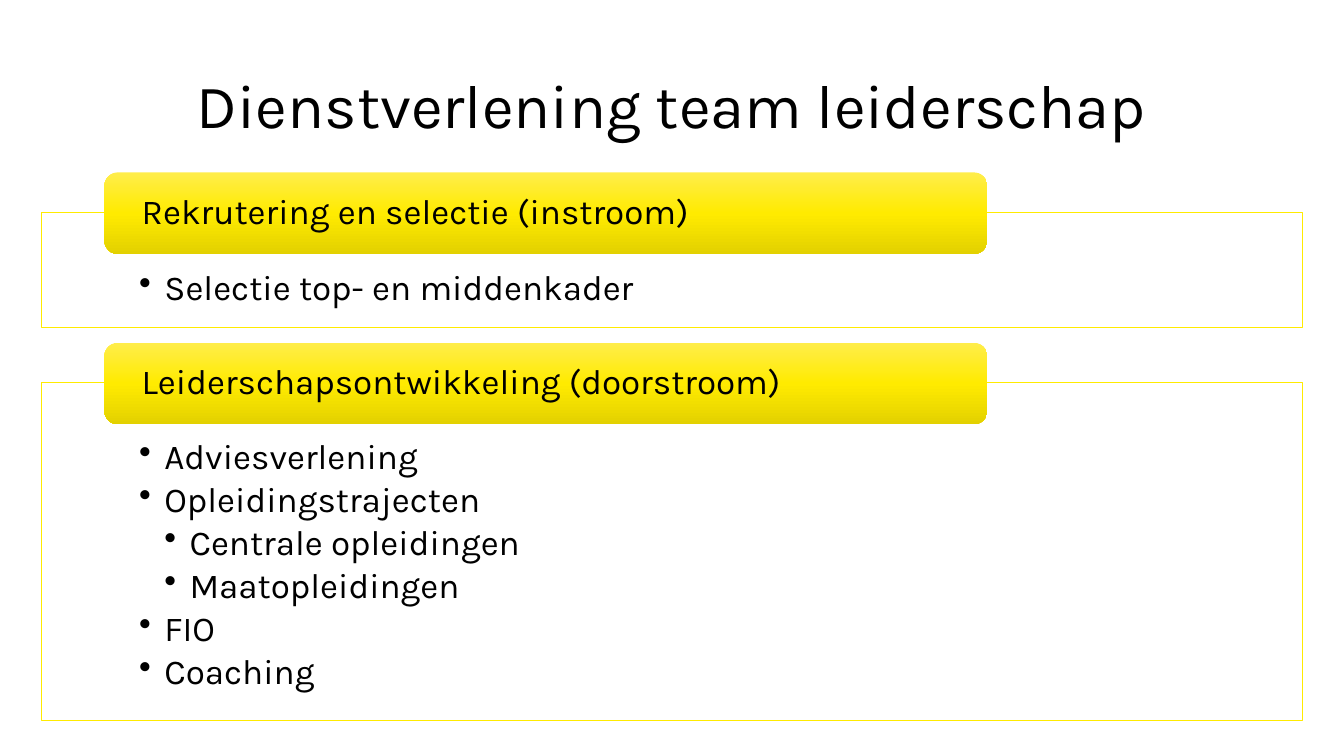
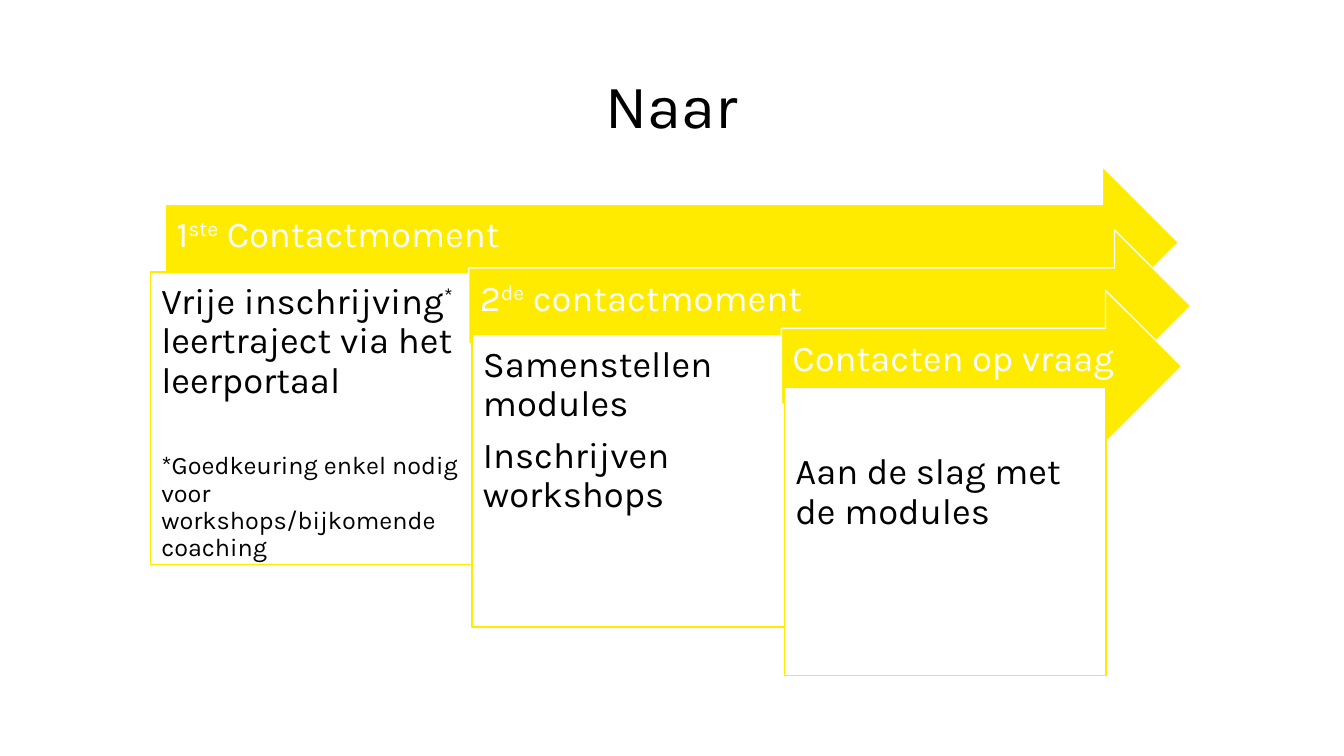
from copy import deepcopy

from lxml import etree
from pptx import Presentation
from pptx.dml.color import RGBColor
from pptx.enum.shapes import MSO_SHAPE
from pptx.enum.text import MSO_ANCHOR, MSO_AUTO_SIZE, PP_ALIGN
from pptx.oxml.ns import qn
from pptx.util import Inches, Pt

RECTANGLE = MSO_SHAPE.RECTANGLE
ROUNDED = MSO_SHAPE.ROUNDED_RECTANGLE
ARROW = MSO_SHAPE.RIGHT_ARROW
TOP, MIDDLE = MSO_ANCHOR.TOP, MSO_ANCHOR.MIDDLE
LEFT, CENTER = PP_ALIGN.LEFT, PP_ALIGN.CENTER
NO_AUTOFIT = MSO_AUTO_SIZE.NONE

BLACK = RGBColor(0x00, 0x00, 0x00)
WHITE = RGBColor(0xFF, 0xFF, 0xFF)
YELLOW = RGBColor(0xFF, 0xEB, 0x00)
BAND_GRADIENT = [
    (0, RGBColor(0xFF, 0xED, 0x4B)),
    (0.5, YELLOW),
    (1, RGBColor(0xE3, 0xD1, 0x00)),
]
FONT = "Karla"
TITLE_ONLY = 5

presentation = Presentation()
presentation.slide_width = Inches(13.33)
presentation.slide_height = Inches(7.5)

# The grid has 100 columns and 100 rows
COLUMN = presentation.slide_width / 100
ROW = presentation.slide_height / 100
MARGIN = 3.08
CONTENT_WIDTH = 100 - 2 * MARGIN


def add_box(slide, kind, place, insets, anchor, fill=None, line=None, line_width=1):
    """Add a shape at (left, top, width, height) in grid units; a fill of None keeps it open for a gradient."""
    left, top, width, height = place
    shape = slide.shapes.add_shape(
        kind, round(left * COLUMN), round(top * ROW), round(width * COLUMN), round(height * ROW)
    )
    shape.shadow.inherit = False
    if fill is not None:
        shape.fill.solid()
        shape.fill.fore_color.rgb = fill
    if line is None:
        shape.line.fill.background()
    else:
        shape.line.color.rgb = line
        shape.line.width = Pt(line_width)
    frame = shape.text_frame
    frame.word_wrap = True
    frame.vertical_anchor = anchor
    frame.margin_left, frame.margin_top, frame.margin_right, frame.margin_bottom = map(Inches, insets)
    return shape


def write(frame, index, parts, size, color, gap=0.35, bullet_level=0):
    """Fill paragraph number index; every second part is raised, gap is a share of the size."""
    paragraph = frame.paragraphs[0] if index == 0 else frame.add_paragraph()
    if bullet_level:
        properties = paragraph._p.get_or_add_pPr()
        properties.set("marL", str(Inches(0.25 * bullet_level)))
        properties.set("indent", str(-Inches(0.25)))
        etree.SubElement(properties, qn("a:buChar")).set("char", "•")
    paragraph.alignment = LEFT
    paragraph.line_spacing = 0.9
    paragraph.space_after = Pt(gap * size)
    paragraph.font.name = FONT
    paragraph.font.size = Pt(size)
    paragraph.font.color.rgb = color
    for number, part in enumerate(parts):
        run = paragraph.add_run()
        run.text = part
        if number % 2:
            run._r.get_or_add_rPr().set("baseline", "30000")
    return paragraph


# Slides with their titles
slides = []
for title_text in ("Dienstverlening team leiderschap", "Naar"):
    slide = presentation.slides.add_slide(presentation.slide_layouts[TITLE_ONLY])
    title = slide.shapes.title
    title.left, title.top = round(MARGIN * COLUMN), round(6.27 * ROW)
    title.width, title.height = round(CONTENT_WIDTH * COLUMN), round(17.73 * ROW)
    frame = title.text_frame
    frame.text = title_text
    frame.auto_size = NO_AUTOFIT
    frame.word_wrap = True
    frame.vertical_anchor = MIDDLE
    frame.margin_left = frame.margin_top = frame.margin_right = frame.margin_bottom = 0
    paragraph = frame.paragraphs[0]
    paragraph.alignment = CENTER
    paragraph.line_spacing = Pt(38)
    paragraph.font.name = FONT
    paragraph.font.size = Pt(44)
    paragraph.font.color.rgb = BLACK
    slides.append(slide)
services_slide, moments_slide = slides

# Services: a yellow band on the top edge of each panel
# band top, panel top, panel height, heading, bullets with their level
services = [
    (22.8, 28.13, 15.2, "Rekrutering en selectie (instroom)", [("Selectie top- en middenkader", 1)]),
    (45.33, 50.53, 44.8, "Leiderschapsontwikkeling (doorstroom)", [
        ("Adviesverlening", 1),
        ("Opleidingstrajecten", 1),
        ("Centrale opleidingen", 2),
        ("Maatopleidingen", 2),
        ("FIO", 1),
        ("Coaching", 1),
    ]),
]
for band_top, panel_top, panel_height, heading, bullets in services:
    panel = add_box(services_slide, RECTANGLE, (MARGIN, panel_top, CONTENT_WIDTH, panel_height),
                    (0.97, 0.57, 0.97, 0.19), TOP, WHITE, YELLOW, 0.5)
    for index, (text, level) in enumerate(bullets):
        write(panel.text_frame, index, [text], 25, BLACK, gap=0.15, bullet_level=level)

    band_place = (MARGIN + 0.05 * CONTENT_WIDTH, band_top, 0.7 * CONTENT_WIDTH, 10.8)
    band = add_box(services_slide, ROUNDED, band_place, (0.33, 0, 0.33, 0), MIDDLE)
    band.fill.gradient()
    band.fill.gradient_angle = 270
    stop_list = next(band._element.iter(qn("a:gsLst")))
    stop_list.append(deepcopy(stop_list[-1]))
    for stop, (position, color) in zip(band.fill.gradient_stops, BAND_GRADIENT):
        stop.position = position
        stop.color.rgb = color
    write(band.text_frame, 0, [heading], 25, BLACK)

# Contact moments: overlapping arrows, each with a panel below its heading
# arrow place, heading, panel place, panel top inset, (parts, size, space before)
ARROW_HEIGHT = 20.13
PANEL_WIDTH = 23.93
moments = [
    ((12.3, 22, 75.39, ARROW_HEIGHT), ["1", "ste", " Contactmoment"],
     (11.18, 36, PANEL_WIDTH, 38.67), 0.11, [
        (["Vrije inschrijving", "*", " leertraject via het leerportaal"], 26, 0),
        (["*Goedkeuring enkel nodig voor workshops/bijkomende coaching"], 18, 28),
    ]),
    ((34.88, 30.4, 53.71, ARROW_HEIGHT), ["2", "de", " contactmoment"],
     (35.11, 44.27, PANEL_WIDTH, 38.67), 0.11, [
        (["Samenstellen modules"], 26, 0),
        (["Inschrijven workshops"], 26, 0),
    ]),
    ((58.14, 38.4, 29.78, ARROW_HEIGHT), ["Contacten op vraag"],
     (58.36, 51.2, PANEL_WIDTH, 38.13), 0.66, [
        (["Aan de slag met de modules"], 26, 0),
    ]),
]
for arrow_place, heading, panel_place, top_inset, texts in moments:
    arrow = add_box(moments_slide, ARROW, arrow_place, (0.11, 0.11, 0.28, 0.24), MIDDLE, YELLOW, WHITE)
    write(arrow.text_frame, 0, heading, 26, WHITE)
    panel = add_box(moments_slide, RECTANGLE, panel_place, (0.11, top_inset, 0.11, 0.11), TOP, WHITE, YELLOW)
    for index, (parts, size, space_before) in enumerate(texts):
        paragraph = write(panel.text_frame, index, parts, size, BLACK)
        if space_before:
            paragraph.space_before = Pt(space_before)

presentation.save("out.pptx")
